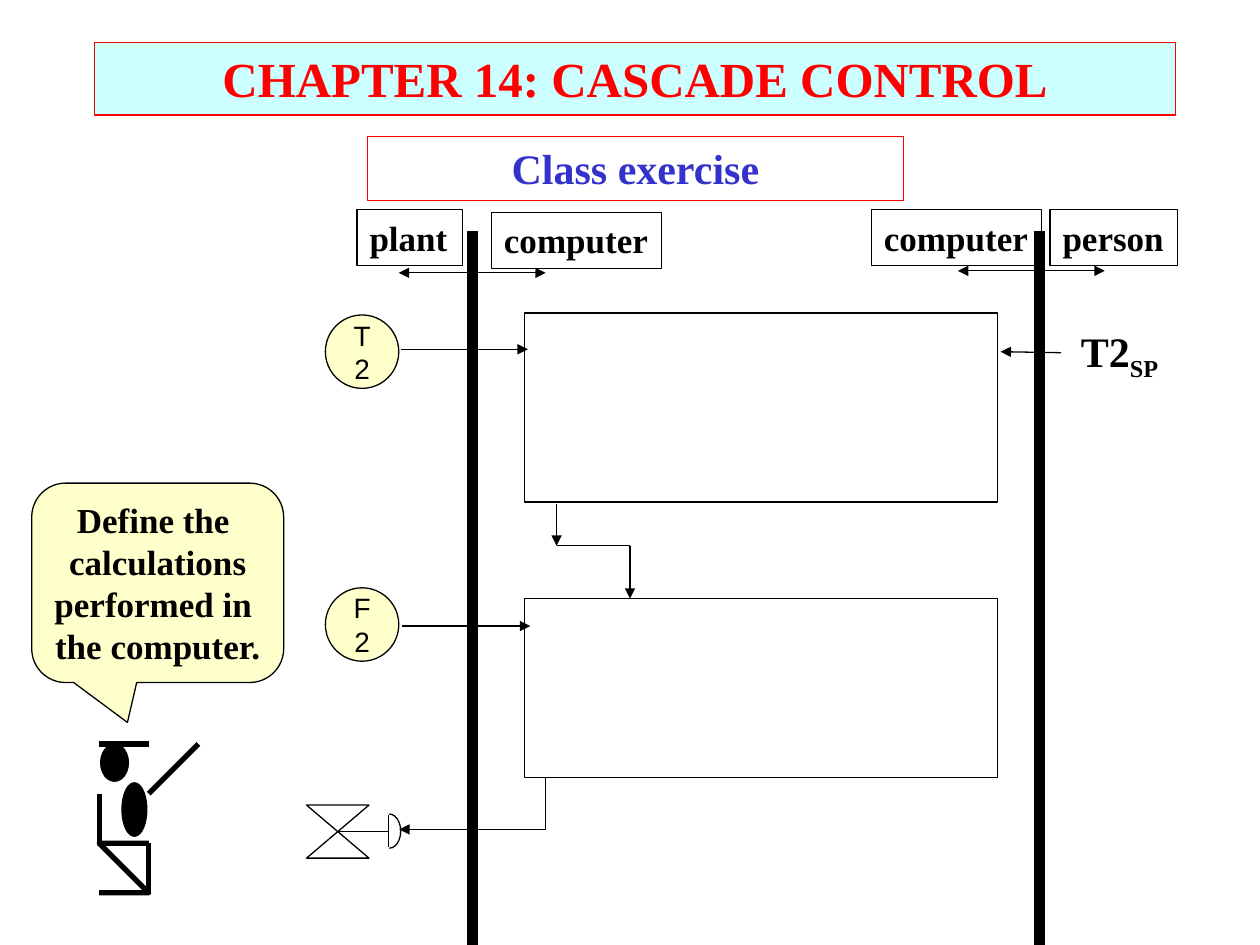
"""Build the cascade control class exercise slide."""
from typing import NamedTuple, Optional

from lxml.etree import SubElement
from pptx import Presentation
from pptx.dml.color import RGBColor
from pptx.enum.shapes import MSO_CONNECTOR as Conn, MSO_SHAPE as Shp
from pptx.enum.text import MSO_ANCHOR as Anchor, MSO_AUTO_SIZE as AutoSize, PP_ALIGN as Align
from pptx.oxml.ns import qn
from pptx.util import Cm, Pt

COLORS = {
    "ink": "000000",
    "red": "FF0000",
    "blue": "3333CC",
    "aqua": "CCFFFF",
    "cream": "FFFFCC",
}
SERIF, SANS = "Times New Roman", "Arial"


class Box(NamedTuple):
    left: float
    top: float
    width: float
    height: float


class Style(NamedTuple):
    size: int
    color: str = "ink"
    font: str = SERIF
    bold: bool = True
    align: Align = Align.CENTER
    anchor: Anchor = Anchor.TOP
    wrap: bool = True
    before: int = 0


class Tag(NamedTuple):
    text: str
    left: float
    width: float
    top: float = 4.23


class Loop(NamedTuple):
    letter: str
    sensor_top: float
    box_top: float
    box_height: float


class Wire(NamedTuple):
    x1: float
    y1: float
    x2: float
    y2: float
    head: bool = False
    tail: bool = False
    width: float = 0.75


HEADING = Style(28, "red", before=3)
SUBHEADING = Style(24, "blue", before=3)
SETPOINT = Style(24, align=Align.LEFT, before=3)
LABEL = Style(20, align=Align.LEFT, wrap=False)
SPEECH = Style(20, anchor=Anchor.MIDDLE, wrap=False)
INSTRUMENT = Style(16, font=SANS, bold=False, anchor=Anchor.MIDDLE, wrap=False)

TAGS = [
    Tag("plant", 7.2, 2.12),
    Tag("computer", 9.91, 3.43, 4.28),
    Tag("computer", 17.57, 3.43),
    Tag("person", 21.17, 2.57),
]
LOOPS = [Loop("T", 6.35, 6.31, 3.81), Loop("F", 11.85, 12.07, 3.6)]
BOUNDARIES = [Wire(x, 4.66, x, 19.05, width=6) for x in (9.53, 20.96)]
SPANS = [Wire(x, y, x + 2.96, y, True, True) for x, y in ((8.04, 5.5), (19.31, 5.46))]
SIGNALS = [
    Wire(8.08, 7.04, 10.64, 7.04, tail=True),
    Wire(8.1, 12.62, 10.69, 12.62, tail=True),
    Wire(21.39, 7.11, 20.17, 7.09, tail=True),
    Wire(11.22, 10.16, 11.22, 11, tail=True),
    Wire(11.22, 11, 12.7, 11),
    Wire(12.7, 11, 12.7, 12.07, tail=True),
    Wire(11, 15.67, 11, 16.72),
    Wire(11, 16.72, 8.05, 16.72, tail=True),
]
VALVE_STEM = [Wire(6.81, 16.76, 7.83, 16.76), Wire(7.83, 16.43, 7.83, 17.07)]

HEAD, TRUNK = Box(2.03, 15, 0.56, 0.75), Box(2.46, 15.78, 0.5, 1.08)
LIMBS = {
    "cap": [(2.5, 15.2), (2.67, 15)],
    "pointing arm": [(2.77, 15.88), (3.7, 15.35), (4.09, 15.11)],
    "bent arm": [(2.36, 15.93), (1.98, 16.38), (2.36, 16.71), (2.16, 17.05)],
    "right leg": [(2.8, 16.7), (3.15, 17.25), (2.97, 17.98), (3.43, 18)],
    "left leg": [(2.62, 16.75), (2.47, 17.35), (2.62, 17.95), (2.15, 18.2)],
}


def rgb(name: str) -> RGBColor:
    return RGBColor.from_string(COLORS[name])


def paint(sp, fill: Optional[str], line: str, width: float = 0.75) -> None:
    sp.shadow.inherit = False
    if fill:
        sp.fill.solid()
        sp.fill.fore_color.rgb = rgb(fill)
    else:
        sp.fill.background()
    sp.line.color.rgb, sp.line.width = rgb(line), Pt(width)


def add_run(p, text: str, style: Style):
    r = p.add_run()
    r.text = text
    r.font.name, r.font.size, r.font.bold = style.font, Pt(style.size), style.bold
    r.font.color.rgb = rgb(style.color)
    return r


def write(sp, lines: list[str], style: Style) -> None:
    tf = sp.text_frame
    tf.auto_size, tf.word_wrap, tf.vertical_anchor = AutoSize.NONE, style.wrap, style.anchor
    for i, text in enumerate(lines):
        p = tf.add_paragraph() if i else tf.paragraphs[0]
        p.alignment, p.space_before = style.align, Pt(style.before)
        add_run(p, text, style)


def add_box(s, box: Box, kind=Shp.RECTANGLE, fill: Optional[str] = None, line: str = "ink"):
    sp = s.shapes.add_shape(kind, *map(Cm, box))
    paint(sp, fill, line)
    return sp


def add_wire(s, wire: Wire) -> None:
    c = s.shapes.add_connector(Conn.STRAIGHT, *map(Cm, wire[:4]))
    c.line.width, c.line.color.rgb = Pt(wire.width), rgb("ink")
    ln = c.line._get_or_add_ln()
    for end, shown in (("a:headEnd", wire.head), ("a:tailEnd", wire.tail)):
        if shown:
            SubElement(ln, qn(end), type="triangle")
    SubElement(c._element.spPr, qn("a:effectLst"))


def add_figure(s) -> None:
    for body in (HEAD, TRUNK):
        add_box(s, body, Shp.OVAL, "ink")
    for points in LIMBS.values():
        builder = s.shapes.build_freeform(*points[0], scale=Cm(1))
        builder.add_line_segments(points[1:], close=False)
        paint(builder.convert_to_shape(), None, "ink", 3)


def main() -> None:
    prs = Presentation()
    prs.slide_width, prs.slide_height = Cm(25.4), Cm(19.05)
    s = prs.slides.add_slide(prs.slide_layouts[5])

    title = s.shapes.title
    title.left, title.top, title.width, title.height = map(Cm, (1.9, 0.85, 21.8, 1.47))
    paint(title, "aqua", "red")
    write(title, ["CHAPTER 14: CASCADE CONTROL"], HEADING)
    write(add_box(s, Box(7.41, 2.75, 10.8, 1.3), line="red"), ["Class exercise"], SUBHEADING)

    add_figure(s)
    callout = add_box(s, Box(0.64, 9.74, 5.08, 4.02), Shp.ROUNDED_RECTANGULAR_CALLOUT, "cream")
    for i, value in enumerate((-0.12, 0.7, 0.17)):
        callout.adjustments[i] = value
    write(callout, ["Define the ", "calculations", "performed in ", "the computer."], SPEECH)

    for tag in TAGS:
        write(add_box(s, Box(tag.left, tag.top, tag.width, 1.13)), [tag.text], LABEL)
    for loop in LOOPS:
        sp = add_box(s, Box(6.56, loop.sensor_top, 1.48, 1.48), Shp.OVAL, "cream")
        write(sp, [loop.letter, "2"], INSTRUMENT)
        add_box(s, Box(10.58, loop.box_top, 9.53, loop.box_height))

    add_box(s, Box(6.18, 16.23, 1.26, 1.07), Shp.FLOWCHART_COLLATE)
    dome = add_box(s, Box(7.62, 16.41, 0.46, 0.69), Shp.ARC)
    dome.adjustments[1] = 54
    for wire in BOUNDARIES + SPANS + SIGNALS + VALVE_STEM:
        add_wire(s, wire)

    setpoint = s.shapes.add_textbox(*map(Cm, (21.54, 6.43, 2.74, 1.27)))
    write(setpoint, ["T2"], SETPOINT)
    r = add_run(setpoint.text_frame.paragraphs[0], "SP", SETPOINT)
    r.font._element.set("baseline", "-25000")

    prs.save("out.pptx")


if __name__ == "__main__":
    main()
